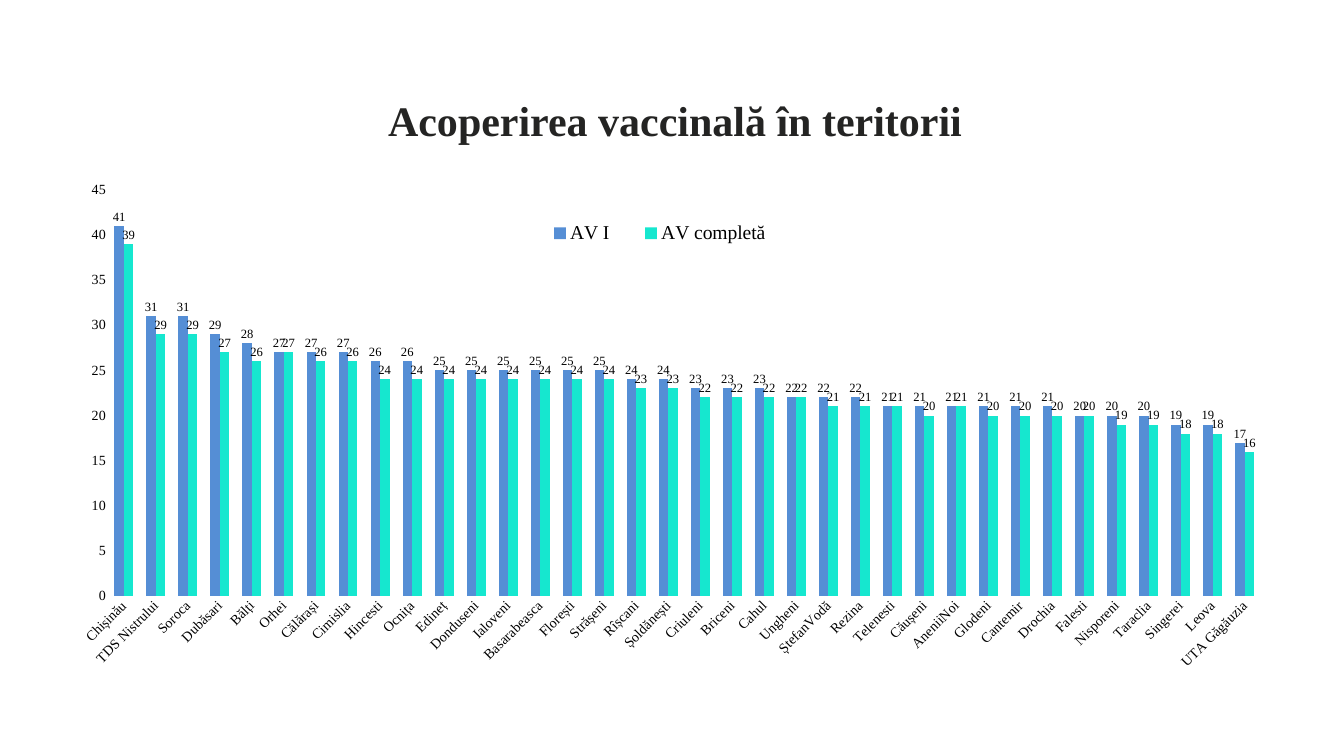
import dataclasses

import lxml.etree
import pptx
import pptx.chart.data
import pptx.dml.color
import pptx.enum.chart
import pptx.enum.text
import pptx.oxml.ns
import pptx.util


@dataclasses.dataclass(frozen=True)
class Theme:
    font: str = "Times New Roman"
    title_color: str = "242423"
    text_color: str = "000000"
    series_colors: tuple = ("558ED5", "16E7CF")
    title_size: int = 60
    legend_size: int = 28
    axis_size: int = 20
    label_size: int = 18


COVERAGE = [
    ("Chișinău", 41, 39), ("TDS Nistrului", 31, 29), ("Soroca", 31, 29),
    ("Dubăsari", 29, 27), ("Bălți", 28, 26), ("Orhei", 27, 27),
    ("Călărași", 27, 26), ("Cimislia", 27, 26), ("Hincesti", 26, 24),
    ("Ocnița", 26, 24), ("Edineț", 25, 24), ("Donduseni", 25, 24),
    ("Ialoveni", 25, 24), ("Basarabeasca", 25, 24), ("Florești", 25, 24),
    ("Strășeni", 25, 24), ("Rîșcani", 24, 23), ("Șoldănești", 24, 23),
    ("Criuleni", 23, 22), ("Briceni", 23, 22), ("Cahul", 23, 22),
    ("Ungheni", 22, 22), ("ȘtefanVodă", 22, 21), ("Rezina", 22, 21),
    ("Telenesti", 21, 21), ("Căușeni", 21, 20), ("AneniiNoi", 21, 21),
    ("Glodeni", 21, 20), ("Cantemir", 21, 20), ("Drochia", 21, 20),
    ("Falesti", 20, 20), ("Nisporeni", 20, 19), ("Taraclia", 20, 19),
    ("Singerei", 19, 18), ("Leova", 19, 18), ("UTA Găgăuzia", 17, 16),
]
SERIES_NAMES = ("AV I", "AV completă")


def set_attributes(target, values):
    for name, value in values.items():
        setattr(target, name, value)


class SlideBuilder:
    def __init__(self, slide, theme):
        self.slide = slide
        self.theme = theme

    def style_font(self, font, size, color, bold=False):
        set_attributes(font, {"name": self.theme.font, "size": pptx.util.Pt(size), "bold": bold})
        font.color.rgb = pptx.dml.color.RGBColor.from_string(color)

    def add_title(self, text, box):
        shape = self.slide.shapes.add_textbox(*map(pptx.util.Pt, box))
        set_attributes(shape.text_frame, {
            "word_wrap": True,
            "auto_size": pptx.enum.text.MSO_AUTO_SIZE.SHAPE_TO_FIT_TEXT,
        })
        paragraph = shape.text_frame.paragraphs[0]
        paragraph.alignment = pptx.enum.text.PP_ALIGN.CENTER
        run = paragraph.add_run()
        run.text = text
        self.style_font(run.font, self.theme.title_size, self.theme.title_color, True)

    def place(self, element, index, fractions, inner=False):
        qn = pptx.oxml.ns.qn
        for layout in element.findall(qn("c:layout")):
            element.remove(layout)
        layout = lxml.etree.Element(qn("c:layout"))
        element.insert(index, layout)
        manual = lxml.etree.SubElement(layout, qn("c:manualLayout"))
        settings = {"layoutTarget": "inner"} if inner else {}
        settings.update(xMode="edge", yMode="edge")
        settings.update(zip("xywh", fractions))
        for name, value in settings.items():
            lxml.etree.SubElement(manual, qn("c:" + name)).set("val", str(value))

    def style_axis(self, axis):
        set_attributes(axis, {
            "has_major_gridlines": False,
            "major_tick_mark": pptx.enum.chart.XL_TICK_MARK.NONE,
            "minor_tick_mark": pptx.enum.chart.XL_TICK_MARK.NONE,
        })
        axis.format.line.fill.background()
        self.style_font(axis.tick_labels.font, self.theme.axis_size, self.theme.text_color)

    def style_series(self, series, color):
        series.format.fill.solid()
        series.format.fill.fore_color.rgb = pptx.dml.color.RGBColor.from_string(color)
        series.format.line.fill.background()
        labels = series.data_labels
        set_attributes(labels, {
            "show_value": True,
            "number_format": "0",
            "number_format_is_linked": False,
            "position": pptx.enum.chart.XL_LABEL_POSITION.OUTSIDE_END,
        })
        self.style_font(labels.font, self.theme.label_size, self.theme.text_color)

    def add_column_chart(self, rows, names, box, plot_area, legend_area):
        categories, *columns = zip(*rows)
        data = pptx.chart.data.CategoryChartData(number_format="0")
        data.categories = categories
        for name, values in zip(names, columns):
            data.add_series(name, values)
        kind = pptx.enum.chart.XL_CHART_TYPE.COLUMN_CLUSTERED
        chart = self.slide.shapes.add_chart(kind, *map(pptx.util.Pt, box), data).chart
        set_attributes(chart, {"has_title": False, "has_legend": True})
        self.style_font(chart.font, self.theme.axis_size, self.theme.text_color)

        plot = chart.plots[0]
        set_attributes(plot, {"gap_width": 138, "overlap": 0, "vary_by_categories": False})
        for series, color in zip(plot.series, self.theme.series_colors):
            self.style_series(series, color)

        for axis in (chart.category_axis, chart.value_axis):
            self.style_axis(axis)
        set_attributes(chart.value_axis, {
            "minimum_scale": 0, "maximum_scale": 45, "major_unit": 5,
        })
        set_attributes(chart.value_axis.tick_labels, {
            "number_format": "0", "number_format_is_linked": False,
        })
        body = chart.element.xpath(".//c:catAx/c:txPr/a:bodyPr")[0]
        body.set("rot", str(-45 * 60000))
        body.set("vert", "horz")

        set_attributes(chart.legend, {
            "position": pptx.enum.chart.XL_LEGEND_POSITION.BOTTOM,
            "include_in_layout": False,
        })
        self.style_font(chart.legend.font, self.theme.legend_size, self.theme.text_color)
        self.place(chart.element.xpath(".//c:plotArea")[0], 0, plot_area, True)
        self.place(chart.element.xpath(".//c:legend")[0], 1, legend_area)


def main():
    presentation = pptx.Presentation()
    set_attributes(presentation, {
        "slide_width": pptx.util.Pt(1920), "slide_height": pptx.util.Pt(1080),
    })
    slide = presentation.slides.add_slide(presentation.slide_layouts[6])
    builder = SlideBuilder(slide, Theme())
    builder.add_title("Acoperirea vaccinală în teritorii ", (240, 132, 1464, 80))
    builder.add_column_chart(
        COVERAGE, SERIES_NAMES, (84, 244, 1752, 776),
        plot_area=(0.04, 0.035, 0.94, 0.748),
        legend_area=(0.38, 0.08, 0.22, 0.07),
    )
    presentation.save("out.pptx")


if __name__ == "__main__":
    main()
